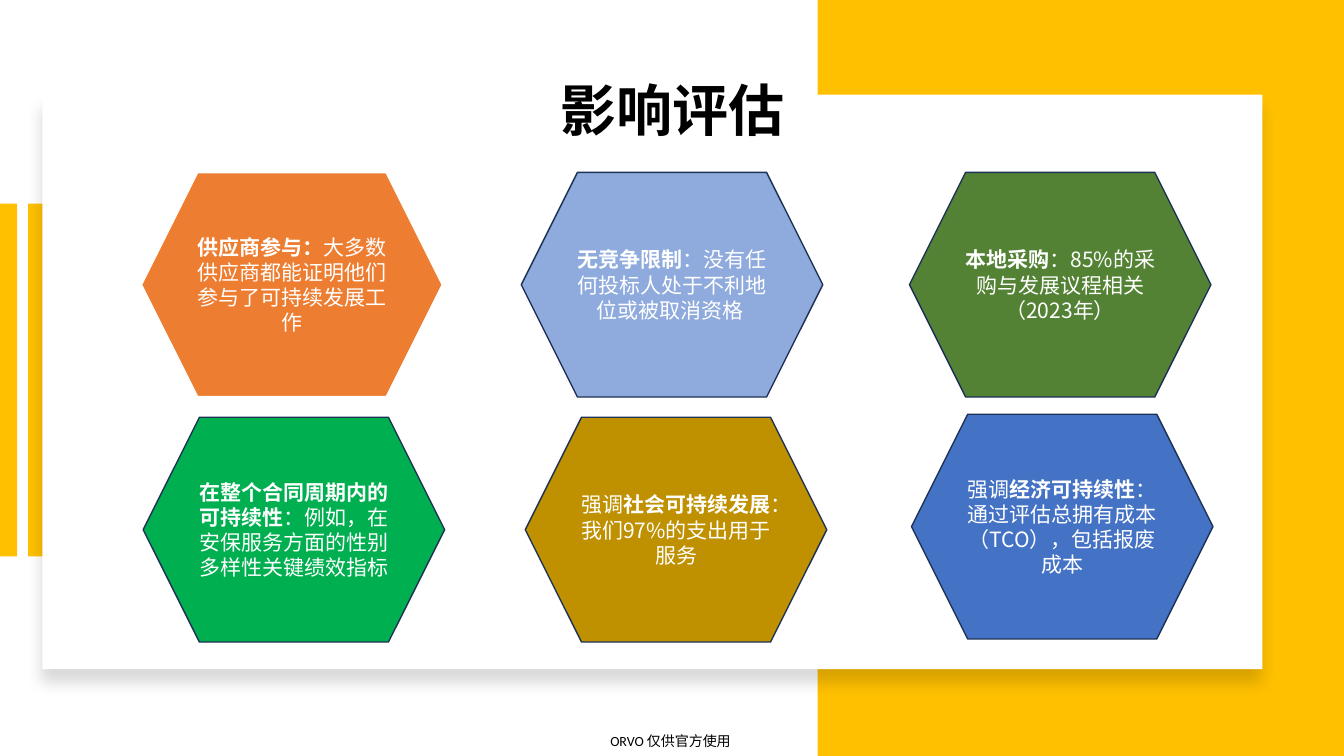
from dataclasses import dataclass

from lxml import etree
from pptx import Presentation
from pptx.dml.color import RGBColor
from pptx.enum.shapes import MSO_SHAPE
from pptx.enum.text import MSO_ANCHOR, PP_ALIGN
from pptx.oxml.ns import qn
from pptx.util import Inches, Pt

RECTANGLE, HEXAGON = MSO_SHAPE.RECTANGLE, MSO_SHAPE.HEXAGON
MIDDLE, CENTER = MSO_ANCHOR.MIDDLE, PP_ALIGN.CENTER


@dataclass(frozen=True)
class Theme:
    accent: str = "FFC000"
    paper: str = "FFFFFF"
    ink: str = "000000"
    outline: str = "1E3256"
    font: str = "Noto Sans CJK SC"
    footer_font: str = "Calibri"
    title_size: int = 40
    body_size: int = 15
    footer_size: int = 10


THEME = Theme()
SLIDE_W, SLIDE_H = 13.33, 7.5

TITLE = "影响评估"
FOOTER = "ORVO 仅供官方使用 "

# Each finding: fill, nudge from its grid cell, paragraphs of (text, bold) runs
FINDINGS = [
    [
        ("ED7D31", (0, 0), [[("供应商参与：", True),
                             ("大多数供应商都能证明他们参与了可持续发展工作", False)]]),
        ("8FAADC", (-0.04, 0), [[("无竞争限制", True),
                                 ("：没有任何投标人处于不利地位或被取消资格 ", False)]]),
        ("548235", (0, 0), [[("本地采购", True), ("：85%的采购与发展议程相关", False)],
                            [("（2023年）", False)]]),
    ],
    [
        ("00B050", (0.02, 0), [[("在整个合同周期内的可持续性", True),
                                ("：例如，在安保服务方面的性别多样性关键绩效指标", False)]]),
        ("BF9000", (0, 0), [[("强调", False), ("社会可持续发展", True),
                             ("：我们97%的支出用于服务", False)]]),
        ("4472C4", (0.02, -0.03), [[("强调", False), ("经济可持续性", True),
                                    ("： 通过评估总拥有成本 （TCO），包括报废成本", False)]]),
    ],
]

GRID_LEFT, GRID_TOP = 1.4, 1.71
COLUMN_STEP, ROW_STEP = 3.81, 2.43
HEXAGON_W, HEXAGON_H = 2.99, 2.23

PANEL_W = 5.22
STRIPE_LEFTS, STRIPE_TOP, STRIPE_W, STRIPE_H = (0, 0.28), 2.02, 0.17, 3.5
CARD_BOX = (0.42, 0.94, 12.1, 5.7)
TITLE_BOX = (0.92, 0.4, 11.5, 1.45)
FOOTER_BOX = (5.64, 7.21, 2.05, 0.29)


def rgb(code):
    return RGBColor.from_string(code)


def add_filled(slide, preset, box, fill, outline=None, width=1):
    shape = slide.shapes.add_shape(preset, *map(Inches, box))
    shape.shadow.inherit = False
    shape.fill.solid()
    shape.fill.fore_color.rgb = rgb(fill)
    if outline:
        shape.line.color.rgb = rgb(outline)
        shape.line.width = Pt(width)
    else:
        shape.line.fill.background()
    return shape


def add_drop_shadow(shape, blur, distance, degrees, opacity):
    effects = shape._element.spPr.find(qn("a:effectLst"))
    shadow = etree.SubElement(
        effects, qn("a:outerShdw"), blurRad=str(Pt(blur)), dist=str(Pt(distance)),
        dir=str(degrees * 60000), algn="t", rotWithShape="0")
    color = etree.SubElement(shadow, qn("a:srgbClr"), val=THEME.ink)
    etree.SubElement(color, qn("a:alpha"), val=str(opacity * 1000))


def write(frame, paragraphs, size, color, latin=THEME.font):
    frame.word_wrap = True
    frame.vertical_anchor = MIDDLE
    for index, runs in enumerate(paragraphs):
        paragraph = frame.add_paragraph() if index else frame.paragraphs[0]
        paragraph.alignment = CENTER
        for text, bold in runs:
            run = paragraph.add_run()
            run.text = text
            run.font.name = latin
            run.font.size = Pt(size)
            run.font.bold = bold
            run.font.color.rgb = rgb(color)
            east_asian = etree.Element(qn("a:ea"), typeface=THEME.font)
            run.font._element.find(qn("a:latin")).addnext(east_asian)


def add_backdrop(slide):
    add_filled(slide, RECTANGLE, (SLIDE_W - PANEL_W, 0, PANEL_W, SLIDE_H), THEME.accent)
    for left in STRIPE_LEFTS:
        add_filled(slide, RECTANGLE, (left, STRIPE_TOP, STRIPE_W, STRIPE_H), THEME.accent)
    card = add_filled(slide, RECTANGLE, CARD_BOX, THEME.paper)
    add_drop_shadow(card, blur=11, distance=10, degrees=90, opacity=15)


def add_findings(slide):
    for row, findings in enumerate(FINDINGS):
        for column, (fill, (dx, dy), paragraphs) in enumerate(findings):
            box = (GRID_LEFT + column * COLUMN_STEP + dx,
                   GRID_TOP + row * ROW_STEP + dy, HEXAGON_W, HEXAGON_H)
            is_first = row == column == 0
            outline, width = (THEME.paper, 1.5) if is_first else (THEME.outline, 1)
            hexagon = add_filled(slide, HEXAGON, box, fill, outline, width)
            write(hexagon.text_frame, paragraphs, THEME.body_size, THEME.paper)


def add_title(slide):
    title = slide.shapes.title
    title.left, title.top, title.width, title.height = map(Inches, TITLE_BOX)
    write(title.text_frame, [[(TITLE, True)]], THEME.title_size, THEME.ink)
    title.text_frame.paragraphs[0].line_spacing = 0.9
    slide.shapes._spTree.append(title._element)  # bring in front of the card


def add_footer(slide):
    frame = slide.shapes.add_textbox(*map(Inches, FOOTER_BOX)).text_frame
    frame.margin_left = frame.margin_right = frame.margin_top = frame.margin_bottom = 0
    write(frame, [[(FOOTER, False)]], THEME.footer_size, THEME.ink, THEME.footer_font)


def main():
    deck = Presentation()
    deck.slide_width, deck.slide_height = Inches(SLIDE_W), Inches(SLIDE_H)
    slide = deck.slides.add_slide(deck.slide_layouts[5])
    add_footer(slide)
    add_backdrop(slide)
    add_findings(slide)
    add_title(slide)
    deck.save("out.pptx")


if __name__ == "__main__":
    main()
